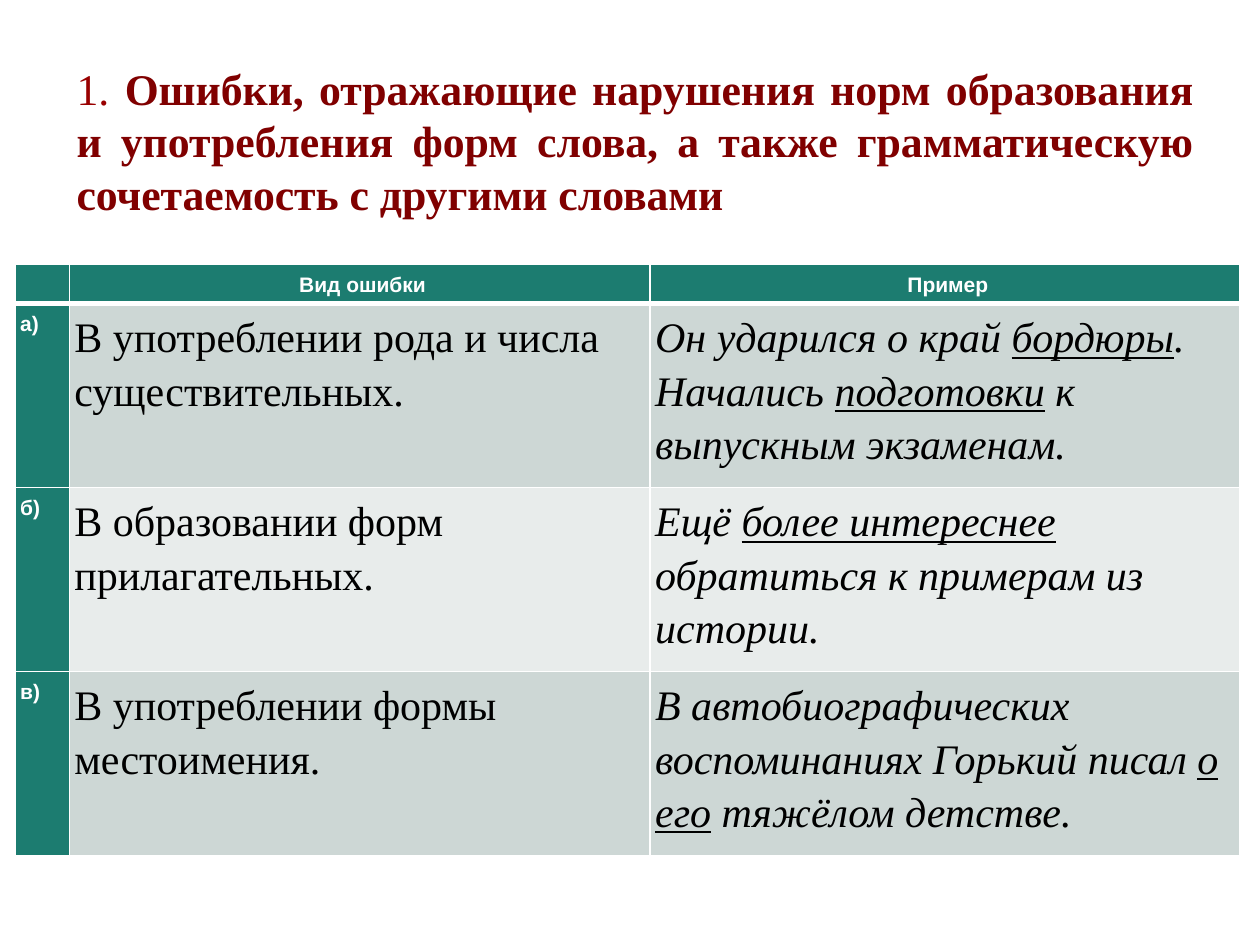
from dataclasses import dataclass

from lxml.etree import SubElement
from pptx import Presentation
from pptx.dml.color import RGBColor
from pptx.enum.text import MSO_ANCHOR, MSO_AUTO_SIZE, PP_ALIGN
from pptx.oxml.ns import qn
from pptx.util import Inches, Pt

COLORS = {
    "number": "990000",
    "heading": "800000",
    "teal": "1C7C70",
    "dark_band": "CDD7D5",
    "light_band": "E8ECEB",
    "white": "FFFFFF",
    "black": "000000",
}


@dataclass
class Style:
    font: str
    size: float
    color: str
    bold: bool = False
    italic: bool = False
    align: PP_ALIGN = PP_ALIGN.LEFT


@dataclass
class ErrorKind:
    letter: str
    kind: str
    example: str  # underlined words stand between underscores


HEADER = Style("Arial", 12, "white", bold=True, align=PP_ALIGN.CENTER)
LETTER = Style("Arial", 12, "white", bold=True)
KIND = Style("Times New Roman", 24, "black")
EXAMPLE = Style("Times New Roman", 24, "black", italic=True)

HEADINGS = ["", " Вид ошибки", " Пример"]
ERRORS = [
    ErrorKind("а)", "В употреблении рода и числа существительных. ",
              "Он ударился о край _бордюры_. \nНачались _подготовки_ к выпускным экзаменам. "),
    ErrorKind("б)", "В образовании форм прилагательных. ",
              "Ещё _более интереснее_ обратиться к примерам из истории. "),
    ErrorKind("в)", "В употреблении формы местоимения. ",
              "В автобиографических воспоминаниях Горький писал _о его_ тяжёлом детстве. "),
]
COLUMN_WIDTHS = [0.43, 4.61, 4.68]
HEADER_HEIGHT, ROW_HEIGHT = 0.3, 1.46


def rgb(name: str) -> RGBColor:
    return RGBColor.from_string(COLORS[name])


def add_borders(cell, bottom: float) -> None:
    """Draw white cell borders; they must precede the fill in the XML."""
    properties = cell._tc.get_or_add_tcPr()
    for side, width in (("L", 1), ("R", 1), ("T", 1), ("B", bottom)):
        line = SubElement(properties, qn(f"a:ln{side}"), w=str(Pt(width)))
        fill = SubElement(line, qn("a:solidFill"))
        SubElement(fill, qn("a:srgbClr"), val=COLORS["white"])


def fill_cell(cell, text: str, style: Style, fill: str, bottom: float = 1) -> None:
    add_borders(cell, bottom)
    cell.fill.solid()
    cell.fill.fore_color.rgb = rgb(fill)
    cell.margin_left = cell.margin_right = Inches(0.04)
    cell.margin_top = cell.margin_bottom = Inches(0.04)
    cell.vertical_anchor = MSO_ANCHOR.TOP

    paragraph = cell.text_frame.paragraphs[0]
    paragraph.alignment = style.align
    paragraph.line_spacing = 1.15
    font = paragraph.font
    font.name, font.size = style.font, Pt(style.size)
    font.bold, font.italic = style.bold, style.italic
    font.color.rgb = rgb(style.color)
    if not text:
        return
    for index, part in enumerate(text.split("_")):
        for line_number, line in enumerate(part.split("\n")):
            if line_number:
                paragraph.add_line_break()
            run = paragraph.add_run()
            run.text = line
            if index % 2:
                run.font.underline = True


def add_heading(slide) -> None:
    heading = slide.shapes.add_textbox(Inches(0.51), Inches(0.44), Inches(9.06), Inches(1.36))
    frame = heading.text_frame
    frame.word_wrap = True
    frame.auto_size = MSO_AUTO_SIZE.SHAPE_TO_FIT_TEXT
    paragraph = frame.paragraphs[0]
    paragraph.alignment = PP_ALIGN.JUSTIFY
    paragraph.font.name, paragraph.font.size = "Times New Roman", Pt(25)
    number = paragraph.add_run()
    number.text = "1. "
    number.font.color.rgb = rgb("number")
    topic = paragraph.add_run()
    topic.text = ("Ошибки, отражающие нарушения норм образования и употребления форм слова, "
                  "а также грамматическую сочетаемость с другими словами")
    topic.font.bold = True
    topic.font.color.rgb = rgb("heading")


def add_error_table(slide) -> None:
    height = HEADER_HEIGHT + ROW_HEIGHT * len(ERRORS)
    table = slide.shapes.add_table(
        len(ERRORS) + 1, len(COLUMN_WIDTHS),
        Inches(0.12), Inches(2.1), Inches(sum(COLUMN_WIDTHS)), Inches(height)).table
    for column, width in zip(table.columns, COLUMN_WIDTHS):
        column.width = Inches(width)

    # Header row
    table.rows[0].height = Inches(HEADER_HEIGHT)
    for column, title in enumerate(HEADINGS):
        fill_cell(table.cell(0, column), title, HEADER, "teal", bottom=3)

    # Banded rows of errors
    for row, error in enumerate(ERRORS, start=1):
        table.rows[row].height = Inches(ROW_HEIGHT)
        band = "dark_band" if row % 2 else "light_band"
        fill_cell(table.cell(row, 0), error.letter, LETTER, "teal")
        fill_cell(table.cell(row, 1), error.kind, KIND, band)
        fill_cell(table.cell(row, 2), error.example, EXAMPLE, band)


def main() -> None:
    presentation = Presentation()
    presentation.slide_width, presentation.slide_height = Inches(10), Inches(7.5)
    slide = presentation.slides.add_slide(presentation.slide_layouts[6])
    slide.background.fill.solid()
    slide.background.fill.fore_color.rgb = rgb("white")
    add_heading(slide)
    add_error_table(slide)
    presentation.save("out.pptx")


if __name__ == "__main__":
    main()
